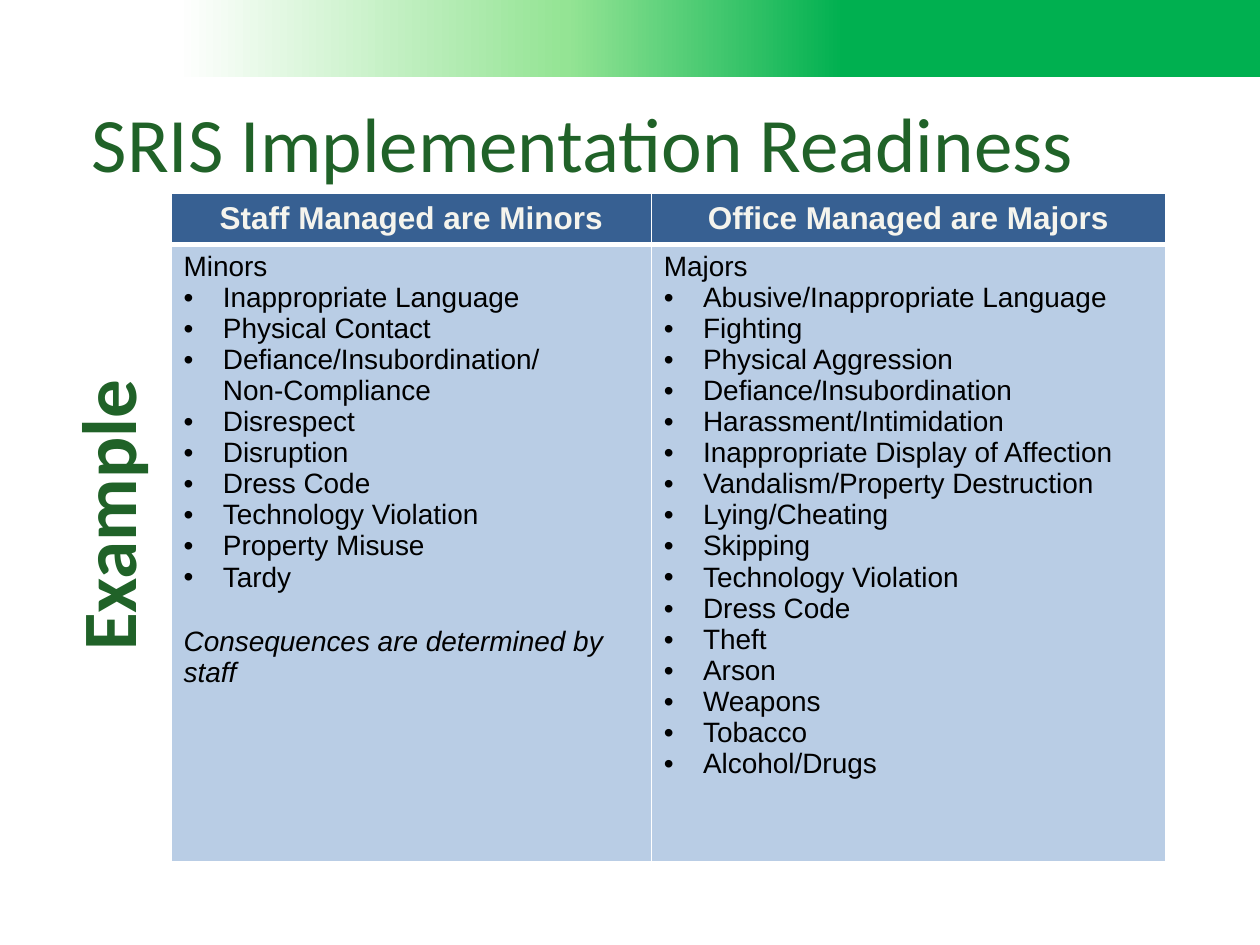
"""Build the readiness slide comparing staff-managed and office-managed behaviors."""
from lxml.etree import SubElement
from pptx import Presentation
from pptx.dml.color import RGBColor
from pptx.enum.shapes import MSO_SHAPE
from pptx.enum.text import MSO_ANCHOR, PP_ALIGN
from pptx.oxml import parse_xml
from pptx.oxml.ns import nsdecls, qn
from pptx.util import Cm, Pt

TITLE = "SRIS Implementation Readiness"
SIDE_LABEL = "Example"
COLUMNS = [
    {
        "header": "Staff Managed are Minors",
        "width": 9.68,
        "lead": "Minors",
        "items": [
            "Inappropriate Language", "Physical Contact",
            "Defiance/Insubordination/\nNon-Compliance", "Disrespect",
            "Disruption", "Dress Code", "Technology Violation",
            "Property Misuse", "Tardy",
        ],
        "note": "Consequences are determined by staff",
    },
    {
        "header": "Office Managed are Majors",
        "width": 10.36,
        "lead": "Majors",
        "items": [
            "Abusive/Inappropriate Language", "Fighting", "Physical Aggression",
            "Defiance/Insubordination", "Harassment/Intimidation",
            "Inappropriate Display of Affection",
            "Vandalism/Property Destruction", "Lying/Cheating", "Skipping",
            "Technology Violation", "Dress Code", "Theft", "Arson", "Weapons",
            "Tobacco", "Alcohol/Drugs",
        ],
        "note": None,
    },
]
ROW_HEIGHTS = (1.04, 12.45)

GREEN = RGBColor(0x00, 0xB0, 0x50)
LIGHT_GREEN = RGBColor(0x94, 0xE4, 0x94)
WHITE = RGBColor(0xFF, 0xFF, 0xFF)
DARK_GREEN = RGBColor(0x20, 0x62, 0x28)
OUTLINE_GREEN = RGBColor(0x2C, 0x88, 0x37)
HEADER_BLUE = RGBColor(0x37, 0x60, 0x92)
BODY_BLUE = RGBColor(0xB9, 0xCD, 0xE5)
CREAM = RGBColor(0xF5, 0xF4, 0xED)
BLACK = RGBColor(0x00, 0x00, 0x00)
BANNER_STOPS = ((33, GREEN), (55, LIGHT_GREEN), (86, WHITE))


def style(paragraph, font_name, size, color, bold=False, italic=False):
    for run in paragraph.runs:
        font = run.font
        font.name, font.size, font.bold, font.italic = font_name, Pt(size), bold, italic
        font.color.rgb = color
    for line_break in paragraph._p.findall(qn("a:br")):
        SubElement(line_break, qn("a:rPr")).set("sz", str(size * 100))


def add_bullet(paragraph):
    properties = paragraph._p.get_or_add_pPr()
    properties.set("marL", str(Cm(0.79)))
    properties.set("indent", str(-Cm(0.79)))
    SubElement(properties, qn("a:buFont")).set("typeface", "Arial")
    SubElement(properties, qn("a:buChar")).set("char", "•")


def paint_cell(cell, color, top, bottom):
    properties = cell._tc.get_or_add_tcPr()
    for side, width in (("L", 1), ("R", 1), ("T", top), ("B", bottom)):
        properties.append(parse_xml(
            f'<a:ln{side} {nsdecls("a")} w="{Pt(width)}"><a:solidFill>'
            f'<a:srgbClr val="{WHITE}"/></a:solidFill></a:ln{side}>'))
    cell.fill.solid()
    cell.fill.fore_color.rgb = color


def add_banner(slide):
    banner = slide.shapes.add_shape(MSO_SHAPE.RECTANGLE, 0, 0, Cm(25.4), Cm(1.55))
    banner.rotation = 180
    banner.shadow.inherit = False
    banner.line.fill.background()
    banner.fill.gradient()
    banner.fill.gradient_angle = 0
    stops = banner._element.spPr.find(qn("a:gradFill")).find(qn("a:gsLst"))
    for stop in list(stops):
        stops.remove(stop)
    for position, color in BANNER_STOPS:
        stop = SubElement(stops, qn("a:gs"), pos=str(position * 1000))
        SubElement(stop, qn("a:srgbClr"), val=str(color))


def add_table(slide):
    width = sum(column["width"] for column in COLUMNS)
    table = slide.shapes.add_table(
        len(ROW_HEIGHTS), len(COLUMNS), Cm(3.45), Cm(3.89),
        Cm(width), Cm(sum(ROW_HEIGHTS))).table
    for row, height in zip(table.rows, ROW_HEIGHTS):
        row.height = Cm(height)
    for index, column in enumerate(COLUMNS):
        table.columns[index].width = Cm(column["width"])
        header, body = table.cell(0, index), table.cell(1, index)
        paint_cell(header, HEADER_BLUE, 1, 3)
        paint_cell(body, BODY_BLUE, 3, 1)
        header.vertical_anchor = MSO_ANCHOR.MIDDLE
        heading = header.text_frame.paragraphs[0]
        heading.text = column["header"]
        heading.alignment = PP_ALIGN.CENTER
        style(heading, "Arial", 18, CREAM, bold=True)

        lead = body.text_frame.paragraphs[0]
        lead.text = column["lead"]
        style(lead, "Arial", 16, BLACK)
        for text in column["items"]:
            item = body.text_frame.add_paragraph()
            item.text = text
            add_bullet(item)
            style(item, "Arial", 16, BLACK)
        if column["note"]:
            note = body.text_frame.add_paragraph()
            note.text = column["note"]
            note.space_before = Pt(19)
            style(note, "Arial", 16, BLACK, italic=True)


def add_label(slide, text, left, top, width, height, bold=False):
    frame = slide.shapes.add_textbox(Cm(left), Cm(top), Cm(width), Cm(height)).text_frame
    frame.word_wrap = True
    label = frame.paragraphs[0]
    label.text = text
    style(label, "Calibri", 44, DARK_GREEN, bold=bold)
    return frame


def add_side_label(slide):
    frame = add_label(slide, SIDE_LABEL, 1.07, 6.78, 2.39, 7.21, bold=True)
    frame._txBody.bodyPr.set("vert", "vert270")
    label = frame.paragraphs[0]
    label.alignment = PP_ALIGN.CENTER
    label.runs[0]._r.rPr.insert(0, parse_xml(
        f'<a:ln {nsdecls("a")} w="{Pt(1)}"><a:solidFill>'
        f'<a:srgbClr val="{OUTLINE_GREEN}"/></a:solidFill></a:ln>'))


def add_title(slide):
    frame = add_label(slide, TITLE, 0, 1.27, 25.4, 3.18)
    frame.vertical_anchor = MSO_ANCHOR.MIDDLE
    frame.paragraphs[0]._p.get_or_add_pPr().set("indent", str(Cm(1.6)))


def main():
    deck = Presentation()
    deck.slide_width, deck.slide_height = Cm(25.4), Cm(19.05)
    slide = deck.slides.add_slide(deck.slide_layouts[6])
    add_banner(slide)
    add_table(slide)
    add_side_label(slide)
    add_title(slide)
    deck.save("out.pptx")


if __name__ == "__main__":
    main()
